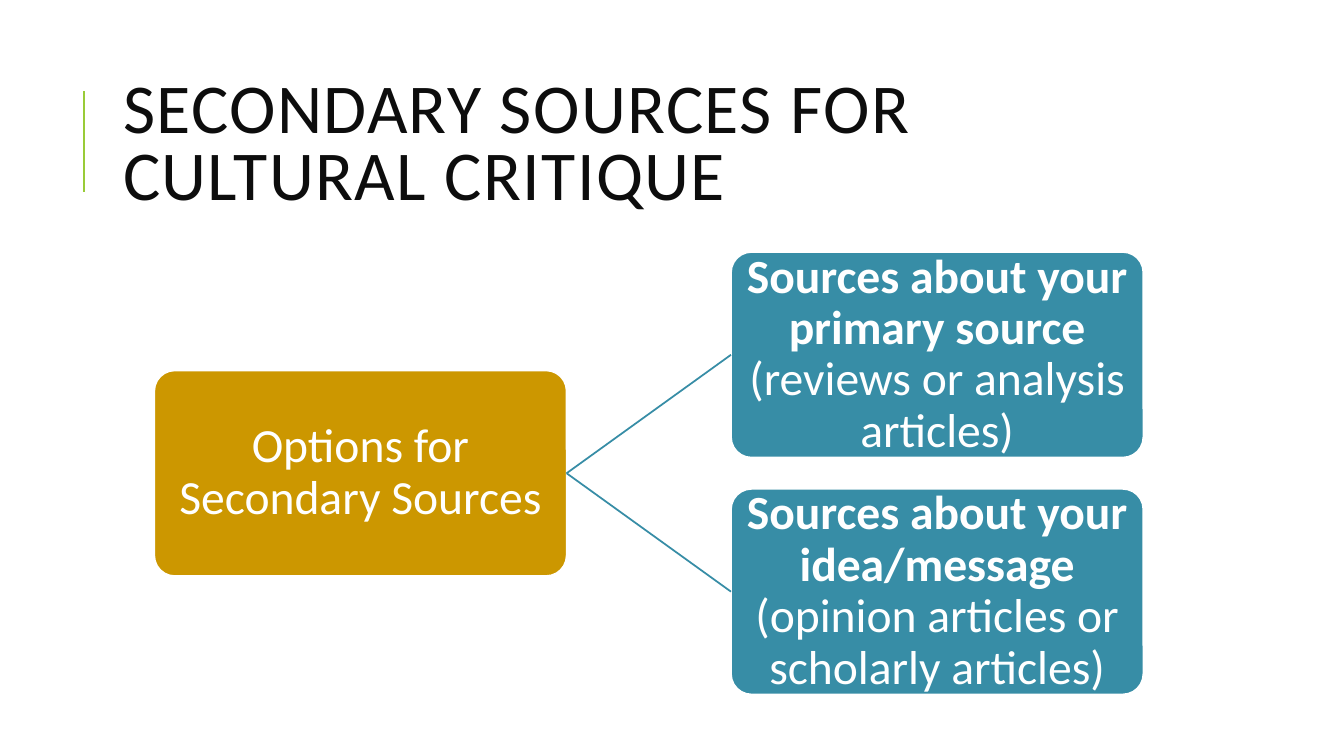
"""Build the slide on secondary sources for cultural critique."""
import pptx
import pptx.util
import pptx.dml.color
import pptx.enum.shapes
import pptx.enum.text
import pptx.oxml.ns
import lxml.etree

TITLE = "SECONDARY SOURCES FOR CULTURAL CRITIQUE"
ROOT = [("Options for Secondary Sources", False)]
LEAVES = [
    [("Sources about your primary source", True),
     (" (reviews or analysis articles)", False)],
    [("Sources about your idea/message", True),
     (" (opinion articles or scholarly articles)", False)],
]
COLORS = {"gold": "CC9700", "teal": "378DA6", "green": "99CB38",
          "ink": "0D0D0D", "white": "FFFFFF"}
FONT = "Calibri"
BOX_W, BOX_H = 409, 204
ROOT_X, LEAF_X = 153, 725
LEAF_Y, STEP = 250, 235
ROOT_Y = LEAF_Y + STEP * (len(LEAVES) - 1) / 2


def px(count):
    return pptx.util.Emu(round(count * 9144))


def color(name):
    return pptx.dml.color.RGBColor.from_string(COLORS[name])


def add_run(para, text, size, tint, bold=False):
    run = para.add_run()
    run.text = text
    font = run.font
    font.name, font.size, font.bold = FONT, pptx.util.Pt(size), bold
    font.color.rgb = color(tint)
    return run


def add_box(slide, left, top, fill, runs):
    box = slide.shapes.add_shape(
        pptx.enum.shapes.MSO_SHAPE.ROUNDED_RECTANGLE,
        px(left), px(top), px(BOX_W), px(BOX_H))
    box.adjustments[0] = 0.1
    box.shadow.inherit = False
    box.fill.solid()
    box.fill.fore_color.rgb = color(fill)
    box.line.color.rgb = color("white")
    box.line.width = pptx.util.Pt(1.25)
    frame = box.text_frame
    frame.word_wrap = True
    frame.vertical_anchor = pptx.enum.text.MSO_ANCHOR.MIDDLE
    frame.margin_left = frame.margin_right = px(8)
    frame.margin_top = frame.margin_bottom = px(8)
    para = frame.paragraphs[0]
    para.alignment = pptx.enum.text.PP_ALIGN.CENTER
    para.line_spacing = 0.9
    for text, bold in runs:
        add_run(para, text, 34, "white", bold)
    return box


def add_line(slide, start, end, tint, width):
    line = slide.shapes.add_connector(
        pptx.enum.shapes.MSO_CONNECTOR.STRAIGHT,
        px(start[0]), px(start[1]), px(end[0]), px(end[1]))
    line.line.color.rgb = color(tint)
    line.line.width = pptx.util.Pt(width)
    props = line._element.spPr
    lxml.etree.SubElement(props, pptx.oxml.ns.qn("a:effectLst"))
    return line


def add_title(slide):
    title = slide.shapes.title
    title.left, title.top = px(112), px(64)
    title.width, title.height = px(1063), px(164)
    frame = title.text_frame
    frame.word_wrap = True
    frame.auto_size = pptx.enum.text.MSO_AUTO_SIZE.NONE
    frame.vertical_anchor = pptx.enum.text.MSO_ANCHOR.MIDDLE
    para = frame.paragraphs[0]
    para.alignment = pptx.enum.text.PP_ALIGN.LEFT
    para.line_spacing = 0.8
    run = add_run(para, TITLE, 50, "ink")
    run.font._element.set("spc", "100")


def main():
    deck = pptx.Presentation()
    deck.slide_width, deck.slide_height = px(1333), px(750)
    slide = deck.slides.add_slide(deck.slide_layouts[5])
    add_line(slide, (83, 190), (83, 90), "green", 1.5)
    add_title(slide)
    root = add_box(slide, ROOT_X, ROOT_Y, "gold", ROOT)
    start = (ROOT_X + BOX_W, ROOT_Y + BOX_H / 2)
    for index, runs in enumerate(LEAVES):
        top = LEAF_Y + STEP * index
        leaf = add_box(slide, LEAF_X, top, "teal", runs)
        line = add_line(slide, start, (LEAF_X, top + BOX_H / 2), "teal", 1.25)
        line.begin_connect(root, 3)
        line.end_connect(leaf, 1)
    deck.save("out.pptx")


if __name__ == "__main__":
    main()
